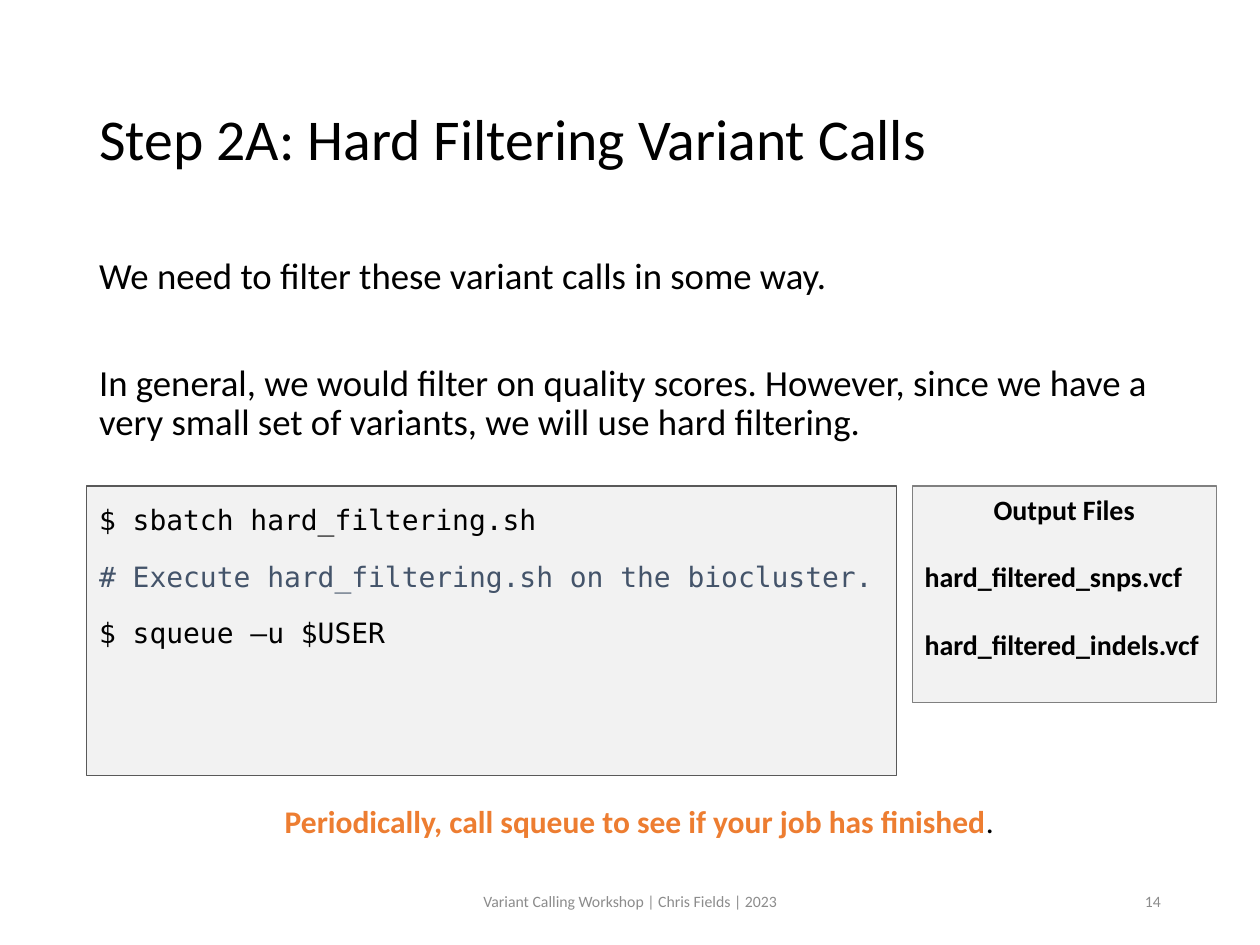
from pptx import Presentation, util as u
from pptx.dml.color import RGBColor
from pptx.enum import shapes, text

COLORS = {
    "ink": "000000", "muted": "8C8C8C", "comment": "44546A", "accent": "ED7D31",
    "panel": "F2F2F2", "code_edge": "595959", "files_edge": "808080",
}
LEFT, CENTER, RIGHT = text.PP_ALIGN.LEFT, text.PP_ALIGN.CENTER, text.PP_ALIGN.RIGHT
TOP, MIDDLE = text.MSO_ANCHOR.TOP, text.MSO_ANCHOR.MIDDLE


class Deck:
    """Holds the style and the current slide, and adds elements to it."""

    body_font = "Calibri"
    code_font = "DejaVu Sans Mono"

    def __init__(self, width, height):
        self.prs = Presentation()
        self.prs.slide_width, self.prs.slide_height = u.Cm(width), u.Cm(height)
        self.s = self.prs.slides.add_slide(self.prs.slide_layouts[6])

    def color(self, name):
        return RGBColor.from_string(COLORS[name])

    def format_run(self, r, size, color="ink", bold=False, font=None):
        r.font.name = font or self.body_font
        r.font.size = u.Pt(size)
        r.font.bold = bold
        r.font.color.rgb = self.color(color)

    def set_lines(self, sp, lines, size, color="ink", bold=False, font=None,
                  align=LEFT, anchor=TOP, spacing=1.0, before=0):
        tf = sp.text_frame
        tf.word_wrap = True
        tf.vertical_anchor = anchor
        tf.text = "\n".join(lines)
        for p in tf.paragraphs:
            p.alignment = align
            p.line_spacing = spacing
            p.space_before = u.Pt(before)
            for r in p.runs:
                self.format_run(r, size, color, bold, font)
        return tf

    def text(self, box, lines, size, **style):
        sp = self.s.shapes.add_textbox(*map(u.Cm, box))
        return self.set_lines(sp, lines, size, **style)

    def panel(self, box, edge, lines, size, **style):
        sp = self.s.shapes.add_shape(shapes.MSO_SHAPE.RECTANGLE, *map(u.Cm, box))
        sp.shadow.inherit = False
        sp.fill.solid()
        sp.fill.fore_color.rgb = self.color("panel")
        sp.line.color.rgb = self.color(edge)
        sp.line.width = u.Pt(0.75)
        return self.set_lines(sp, lines, size, **style)


def main():
    deck = Deck(25.4, 19.05)
    left, width, panel_top = 1.75, 21.9, 9.8

    deck.text((left, 1.02, width, 3.68), ["Step 2A: Hard Filtering Variant Calls"], 33,
              anchor=MIDDLE, spacing=0.9)
    tf = deck.text((left, 5.08, width, 4.55), [
        "We need to filter these variant calls in some way.",
        "In general, we would filter on quality scores. However, since we have a "
        "very small set of variants, we will use hard filtering.",
    ], 21, spacing=0.9, before=7.5)
    tf.paragraphs[1].space_before = u.Pt(38)

    footer = dict(size=9, color="muted", anchor=MIDDLE)
    deck.text((8.41, 17.66, 8.58, 1.01), ["Variant Calling Workshop | Chris Fields | 2023"],
              align=CENTER, **footer)
    deck.text((17.94, 17.66, 5.71, 1.01), ["14"], align=RIGHT, **footer)

    tf = deck.panel((left, panel_top, 16.33, 5.84), "code_edge", [
        "$ sbatch hard_filtering.sh",
        "# Execute hard_filtering.sh on the biocluster.",
        "$ squeue –u $USER",
    ], 16, font=deck.code_font, spacing=1.3, before=7.5)
    tf.paragraphs[1].runs[0].font.color.rgb = deck.color("comment")

    tf = deck.panel((18.39, panel_top, 6.13, 4.37), "files_edge", [
        "Output Files", "hard_filtered_snps.vcf", "hard_filtered_indels.vcf",
    ], 16, bold=True)
    tf.paragraphs[0].alignment = CENTER
    for p in tf.paragraphs[1:]:
        p.space_before = u.Pt(19.5)

    tf = deck.text((5.49, 16.05, 15.95, 1.8),
                   ["Periodically, call squeue to see if your job has finished"], 18,
                   color="accent", bold=True)
    r = tf.paragraphs[0].add_run()
    r.text = "."
    deck.format_run(r, 18)

    deck.prs.save("out.pptx")


if __name__ == "__main__":
    main()
